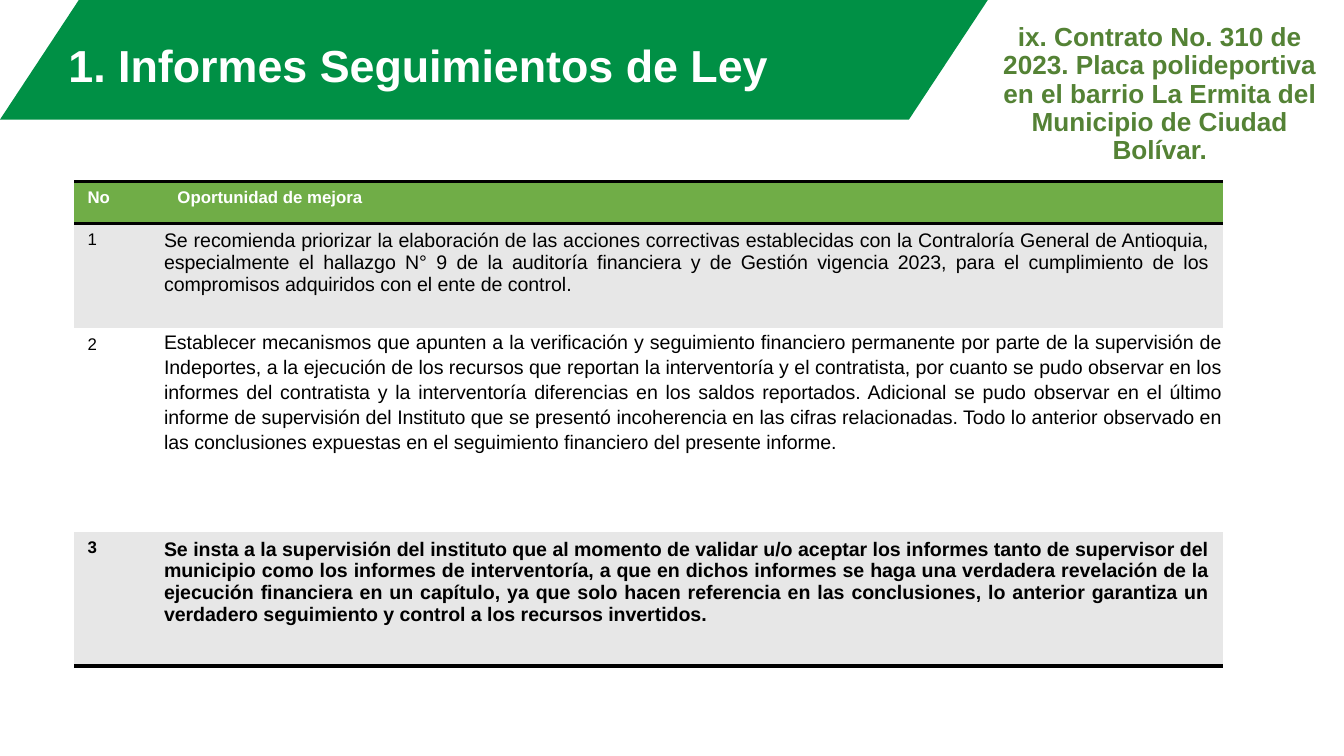
import pptx
import pptx.util
import pptx.dml.color
import pptx.enum.shapes
import pptx.enum.text
import pptx.oxml.ns
from lxml import etree

Cm, Pt = pptx.util.Cm, pptx.util.Pt
RGBColor = pptx.dml.color.RGBColor
ALIGN = pptx.enum.text.PP_ALIGN
ANCHOR = pptx.enum.text.MSO_ANCHOR

GREEN = RGBColor(0x00, 0x90, 0x45)
MOSS = RGBColor(0x54, 0x82, 0x35)
LEAF = RGBColor(0x70, 0xAD, 0x47)
GREY = RGBColor(0xE7, 0xE7, 0xE7)
WHITE = RGBColor(0xFF, 0xFF, 0xFF)
BLACK = RGBColor(0x00, 0x00, 0x00)

TITLE = "1. Informes Seguimientos de Ley"
TOPIC = ("ix. Contrato No. 310 de 2023. Placa polideportiva en el barrio "
         "La Ermita del Municipio de Ciudad Bolívar.")
HEADS = ("No", "Oportunidad de mejora")
ITEMS = (
    "Se recomienda priorizar la elaboración de las acciones correctivas "
    "establecidas con la Contraloría General de Antioquia, especialmente el "
    "hallazgo N° 9 de la auditoría financiera y de Gestión vigencia 2023, para "
    "el cumplimiento de los compromisos adquiridos con el ente de control.",
    "Establecer mecanismos que apunten a la verificación y seguimiento "
    "financiero permanente por parte de la supervisión de Indeportes, a la "
    "ejecución de los recursos que reportan la interventoría y el contratista, "
    "por cuanto se pudo observar en los informes del contratista y la "
    "interventoría diferencias en los saldos reportados. Adicional se pudo "
    "observar en el último informe de supervisión del Instituto que se presentó "
    "incoherencia en las cifras relacionadas. Todo lo anterior observado en las "
    "conclusiones expuestas en el seguimiento financiero del presente informe.",
    "Se insta a la supervisión del instituto que al momento de validar u/o "
    "aceptar los informes tanto de supervisor del municipio como los informes "
    "de interventoría, a que en dichos informes se haga una verdadera revelación "
    "de la ejecución financiera en un capítulo, ya que solo hacen referencia en "
    "las conclusiones, lo anterior garantiza un verdadero seguimiento y control "
    "a los recursos invertidos.",
)


def write(frame, text, size, color, bold=False, align=ALIGN.LEFT, space=1.0):
    frame.text = text
    frame.word_wrap = True
    para = frame.paragraphs[0]
    para.alignment = align
    para.line_spacing = space
    para.space_before = Pt(0)
    font = para.runs[0].font
    font.name, font.size, font.bold = "Arial", Pt(size), bold
    font.color.rgb = color


def add_banner(slide, left, top, width, height):
    """Place the slanted band with the slide title over it."""
    band = slide.shapes.add_shape(
        pptx.enum.shapes.MSO_SHAPE.PARALLELOGRAM, left, top, width, height)
    band.adjustments[0] = 0.66
    band.shadow.inherit = False
    band.fill.solid()
    band.fill.fore_color.rgb = GREEN
    band.line.fill.background()

    title = slide.shapes.title
    band.element.addnext(title.element)
    title.left, title.top = left + Cm(1.04), top - Cm(0.38)
    title.width, title.height = Cm(15.75), Cm(2.24)
    frame = title.text_frame
    frame.auto_size = pptx.enum.text.MSO_AUTO_SIZE.NONE
    frame.vertical_anchor = ANCHOR.BOTTOM
    write(frame, TITLE, 24, WHITE, True, ALIGN.JUSTIFY, 0.9)


def add_topic(slide, left, top, width, height):
    box = slide.shapes.add_textbox(left, top, width, height)
    write(box.text_frame, TOPIC, 14, MOSS, True, ALIGN.CENTER, 0.9)


def set_edges(cell, ruled):
    """Draw a black rule on the ruled sides and clear the others."""
    props = cell._tc.get_or_add_tcPr()
    for side in "LRTB":
        line = etree.SubElement(props, pptx.oxml.ns.qn(f"a:ln{side}"))
        if side in ruled:
            line.set("w", str(Pt(2)))
            fill = etree.SubElement(line, pptx.oxml.ns.qn("a:solidFill"))
            tint = etree.SubElement(fill, pptx.oxml.ns.qn("a:srgbClr"))
            tint.set("val", str(BLACK))
        else:
            etree.SubElement(line, pptx.oxml.ns.qn("a:noFill"))


def set_cell(cell, fill, ruled):
    set_edges(cell, ruled)
    cell.fill.solid()
    cell.fill.fore_color.rgb = fill


def set_pads(cell, left, top, right, base):
    cell.margin_left, cell.margin_top = Cm(left), Cm(top)
    cell.margin_right, cell.margin_bottom = Cm(right), Cm(base)


def add_items(slide, left, top, width, height):
    """Place the table of improvements; the last row is bold."""
    rows = (0.79, 1.98, 3.84, 2.54)
    table = slide.shapes.add_table(
        len(rows), 2, left, top, width, height).table
    table.horz_banding = False
    table.columns[0].width = Cm(1.7)
    table.columns[1].width = width - Cm(1.7)
    for row, size in zip(table.rows, rows):
        row.height = Cm(size)

    for col, head in enumerate(HEADS):
        cell = table.cell(0, col)
        set_cell(cell, LEAF, "TB")
        write(cell.text_frame, head, 9, WHITE, True)

    for num, item in enumerate(ITEMS, 1):
        last = num == len(ITEMS)
        plain = num % 2 == 0
        ruled = "T" if num == 1 else "B" if last else ""
        mark, body = table.cell(num, 0), table.cell(num, 1)
        for cell in (mark, body):
            set_cell(cell, WHITE if plain else GREY, ruled)
        write(mark.text_frame, str(num), 9, BLACK, last)
        write(body.text_frame, item, 10.5, BLACK, last, ALIGN.JUSTIFY,
              1.15 if plain else 1.0)
        if plain:
            set_pads(body, 0, 0, 0, 0)
            body.text_frame.paragraphs[0].space_after = Pt(6)
        else:
            set_pads(body, 0, 0.13, 0.25, 0.13)


def main():
    deck = pptx.Presentation()
    deck.slide_width, deck.slide_height = Cm(25.4), Cm(14.28)
    slide = deck.slides.add_slide(deck.slide_layouts[5])
    add_banner(slide, Cm(0), Cm(0), Cm(18.67), Cm(2.26))
    add_topic(slide, Cm(18.67), Cm(0.33), Cm(6.5), Cm(2.95))
    add_items(slide, Cm(1.4), Cm(3.43), Cm(21.72), Cm(9.15))
    deck.save("out.pptx")


if __name__ == "__main__":
    main()
